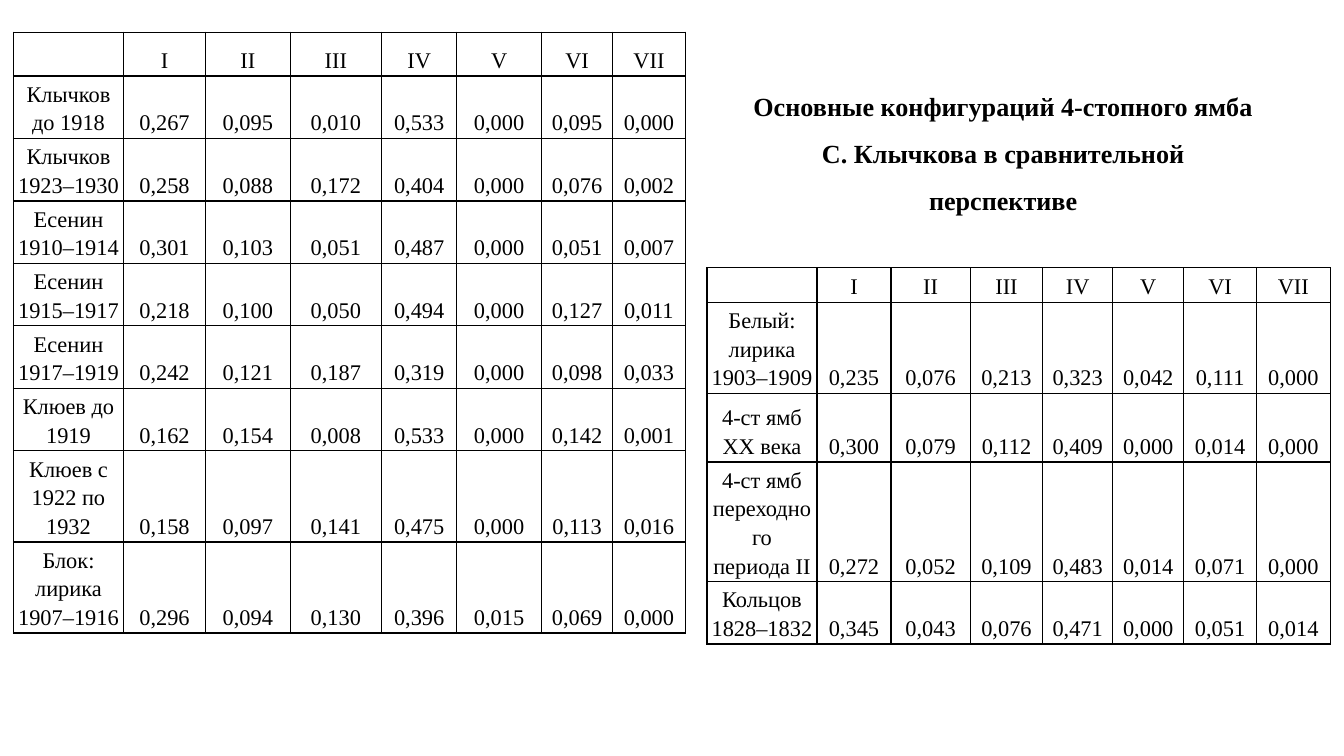
from dataclasses import dataclass

from lxml import etree
from pptx import Presentation
from pptx.dml.color import RGBColor
from pptx.enum import text
from pptx.oxml import ns
from pptx.util import Inches, Pt

SLIDE_WIDTH = Inches(10)
SLIDE_HEIGHT = SLIDE_WIDTH * 9 // 16


@dataclass(frozen=True)
class Theme:
    font: str = "Times New Roman"
    ink: str = "000000"
    paper: str = "FFFFFF"
    title_size: int = 14
    cell_size: int = 12
    border: float = 0.75


THEME = Theme()

TITLE = ("Основные конфигураций 4-стопного ямба С. Клычкова "
         "в сравнительной перспективе")
FORMS = ("", "I II III IV V VI VII")

# Each row: label (a line break starts a paragraph), frequencies of forms I–VII
POETS = [
    FORMS,
    ("Клычков до 1918", "0,267 0,095 0,010 0,533 0,000 0,095 0,000"),
    ("Клычков\n1923–1930", "0,258 0,088 0,172 0,404 0,000 0,076 0,002"),
    ("Есенин\n1910–1914", "0,301 0,103 0,051 0,487 0,000 0,051 0,007"),
    ("Есенин\n1915–1917", "0,218 0,100 0,050 0,494 0,000 0,127 0,011"),
    ("Есенин\n1917–1919", "0,242 0,121 0,187 0,319 0,000 0,098 0,033"),
    ("Клюев до 1919", "0,162 0,154 0,008 0,533 0,000 0,142 0,001"),
    ("Клюев с 1922 по 1932", "0,158 0,097 0,141 0,475 0,000 0,113 0,016"),
    ("Блок: лирика 1907–1916", "0,296 0,094 0,130 0,396 0,015 0,069 0,000"),
]
BACKGROUND = [
    FORMS,
    ("Белый: лирика 1903–1909", "0,235 0,076 0,213 0,323 0,042 0,111 0,000"),
    ("4-ст ямб XX века", "0,300 0,079 0,112 0,409 0,000 0,014 0,000"),
    ("4-ст ямб переходного периода II",
     "0,272 0,052 0,109 0,483 0,014 0,071 0,000"),
    ("Кольцов\n1828–1832", "0,345 0,043 0,076 0,471 0,000 0,051 0,014"),
]


def across(percent):
    return round(SLIDE_WIDTH * percent / 100)


def down(percent):
    return round(SLIDE_HEIGHT * percent / 100)


def set_margins(holder, horizontal, vertical):
    holder.margin_left = holder.margin_right = Inches(horizontal)
    holder.margin_top = holder.margin_bottom = Inches(vertical)


def write(frame, content, size, bold=False, spacing=1.0):
    """Fill a text frame with centred paragraphs, one for each line."""
    for index, line in enumerate(content.split("\n")):
        para = frame.add_paragraph() if index else frame.paragraphs[0]
        para.alignment = text.PP_ALIGN.CENTER
        para.line_spacing = spacing
        if not line:
            # An empty paragraph takes its height from its end mark
            etree.SubElement(para._p, ns.qn("a:endParaRPr"), sz=str(size * 100))
            continue
        span = para.add_run()
        span.text = line
        span.font.name = THEME.font
        span.font.size = Pt(size)
        span.font.bold = bold
        span.font.color.rgb = RGBColor.from_string(THEME.ink)


def draw_borders(cell):
    properties = cell._tc.get_or_add_tcPr()
    for index, side in enumerate(("lnL", "lnR", "lnT", "lnB")):
        line = etree.Element(ns.qn(f"a:{side}"), w=str(Pt(THEME.border)))
        fill = etree.SubElement(line, ns.qn("a:solidFill"))
        etree.SubElement(fill, ns.qn("a:srgbClr"), val=THEME.ink)
        properties.insert(index, line)


def format_cell(cell, content):
    cell.fill.solid()
    cell.fill.fore_color.rgb = RGBColor.from_string(THEME.paper)
    cell.vertical_anchor = text.MSO_ANCHOR.BOTTOM
    set_margins(cell, 0.03, 0.02)
    write(cell.text_frame, content, THEME.cell_size, spacing=1.15)
    draw_borders(cell)


def add_frequency_table(page, left, top, widths, heights, rows):
    """Place a table; all lengths are percentages of the slide."""
    table = page.shapes.add_table(
        len(rows), len(widths), across(left), down(top),
        across(sum(widths)), down(sum(heights))).table
    table.first_row = table.horz_banding = False
    for column, width in zip(table.columns, widths):
        column.width = across(width)
    for row, height, (label, values) in zip(table.rows, heights, rows):
        row.height = down(height)
        for cell, content in zip(row.cells, [label, *values.split()]):
            format_cell(cell, content)


def add_title(page, left, top, width, height):
    box = page.shapes.add_textbox(
        across(left), down(top), across(width), down(height))
    box.text_frame.word_wrap = True
    set_margins(box.text_frame, 0.1, 0.1)
    write(box.text_frame, TITLE, THEME.title_size, bold=True, spacing=1.5)


def main():
    deck = Presentation()
    deck.slide_width, deck.slide_height = SLIDE_WIDTH, SLIDE_HEIGHT
    page = deck.slides.add_slide(deck.slide_layouts[6])
    two_lines, three_lines = 7.83, 11.39
    add_frequency_table(
        page, 1, 4.25,
        widths=[8.2, 6.1, 6.3, 6.8, 5.6, 6.3, 5.3, 5.4],
        heights=[5.8, 7.47, 6.23] + [two_lines] * 4 + [three_lines] * 2,
        rows=POETS)
    add_frequency_table(
        page, 52.6, 35.4,
        widths=[8.2, 5.5, 5.9, 5.4, 5.2, 5.3, 5.4, 5.5],
        heights=[4.6, three_lines, 9.07, 14.59, two_lines],
        rows=BACKGROUND)
    add_title(page, 55, 8.05, 39.3, 24.2)
    deck.save("out.pptx")


if __name__ == "__main__":
    main()
